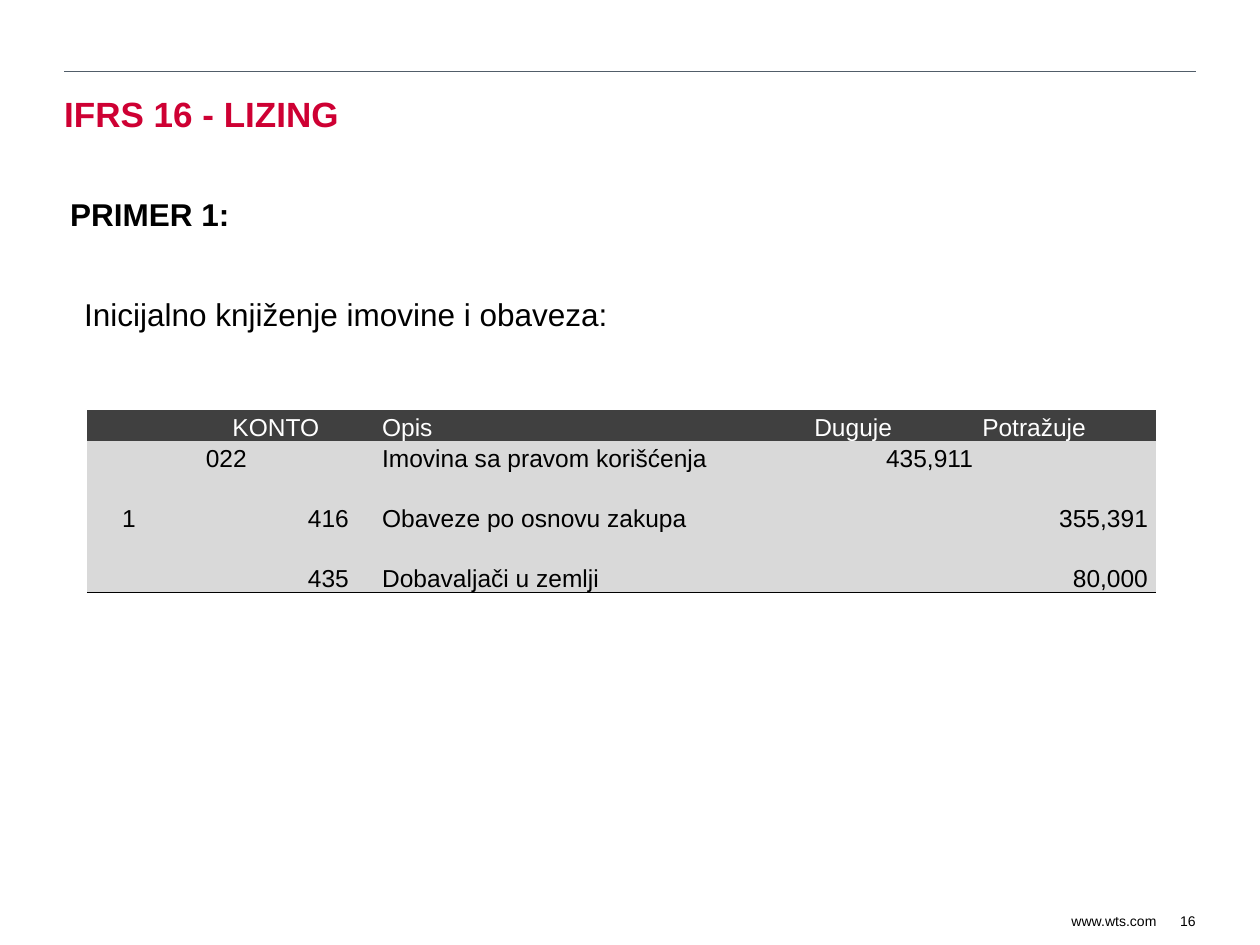
"""Build the lease accounting slide with its opening journal entry."""
from dataclasses import dataclass

from lxml import etree
from pptx import Presentation
from pptx import util as u
from pptx.dml.color import RGBColor
from pptx.enum import shapes, text
from pptx.oxml import ns

LEFT, MID, RIGHT = text.PP_ALIGN.LEFT, text.PP_ALIGN.CENTER, text.PP_ALIGN.RIGHT
PLAIN = "{2D5ABB26-0587-4C30-8999-92F81FD0307C}"


@dataclass(frozen=True)
class Theme:
    """Hold the font, colours and type sizes."""
    font: str = "Arial"
    red: str = "CE0033"
    ink: str = "000000"
    white: str = "FFFFFF"
    rule: str = "515D69"
    head: str = "404040"
    band: str = "D9D9D9"
    title: int = 20
    body: int = 18
    cell: int = 14
    foot: int = 8


THEME = Theme()
COLS = (48, 60, 60, 247, 96, 100)
ROWS = (17.7, 17.7, 34.3, 34.3)
ALIGNS = (MID, MID, MID, LEFT, RIGHT, RIGHT)
ENTRIES = (
    ("", "KONTO", "", "Opis", "Duguje", "Potražuje"),
    ("", "022", "", "Imovina sa pravom korišćenja", "435,911", ""),
    ("1", "", "416", "Obaveze po osnovu zakupa", "", "355,391"),
    ("", "", "435", "Dobavaljači u zemlji", "", "80,000"),
)


def style(frame, size, color, bold=False, align=LEFT):
    """Format every run in a text frame."""
    for par in frame.paragraphs:
        par.alignment = align
        for run in par.runs:
            font = run.font
            font.name, font.size, font.bold = THEME.font, u.Pt(size), bold
            font.color.rgb = RGBColor.from_string(color)


def place(shape, left, top, width, height):
    """Set the bounds of a shape in points."""
    shape.left, shape.top = u.Pt(left), u.Pt(top)
    shape.width, shape.height = u.Pt(width), u.Pt(height)


def inset(frame, left=0, top=0, right=0, bottom=0):
    """Set the margins of a frame or cell in points."""
    frame.margin_left, frame.margin_top = u.Pt(left), u.Pt(top)
    frame.margin_right, frame.margin_bottom = u.Pt(right), u.Pt(bottom)


def add_rule(slide):
    """Draw the thin line above the title."""
    line = slide.shapes.add_connector(
        shapes.MSO_CONNECTOR.STRAIGHT, u.Pt(36.7), u.Pt(41), u.Pt(683.3), u.Pt(41))
    line.line.color.rgb = RGBColor.from_string(THEME.rule)
    line.line.width = u.Pt(0.75)
    etree.SubElement(line._element.spPr, ns.qn("a:effectLst"))


def add_title(slide, words):
    """Fill the title placeholder."""
    title = slide.shapes.title
    place(title, 36.7, 52, 646.6, 48)
    frame = title.text_frame
    frame.text = words
    frame.vertical_anchor = text.MSO_ANCHOR.BOTTOM
    inset(frame, bottom=23)
    style(frame, THEME.title, THEME.red, True)


def add_text(slide, words, box, bold=False):
    """Add a line of body text."""
    frame = slide.shapes.add_textbox(*map(u.Pt, box)).text_frame
    frame.word_wrap = True
    frame.text = words
    style(frame, THEME.body, THEME.ink, bold)


def add_foot(slide, words, box):
    """Add a small footer item set to the right."""
    frame = slide.shapes.add_textbox(*map(u.Pt, box)).text_frame
    frame.word_wrap = False
    frame.vertical_anchor = text.MSO_ANCHOR.MIDDLE
    inset(frame)
    frame.text = words
    style(frame, THEME.foot, THEME.ink, align=RIGHT)


def underline(cell):
    """Draw a black border below a cell."""
    props = cell._tc.get_or_add_tcPr()
    edge = etree.Element(ns.qn("a:lnB"), w=str(u.Pt(1)))
    fill = etree.SubElement(edge, ns.qn("a:solidFill"))
    etree.SubElement(fill, ns.qn("a:srgbClr"), val=THEME.ink)
    props.insert(0, edge)


def fill_cell(cell, words, align, head):
    """Fill and format one table cell."""
    cell.fill.solid()
    cell.fill.fore_color.rgb = RGBColor.from_string(THEME.head if head else THEME.band)
    cell.vertical_anchor = text.MSO_ANCHOR.BOTTOM
    inset(cell, 4 if words == "022" else 0.7, 0.7, 4.6 if align == RIGHT else 0.7)
    cell.text = words
    style(cell.text_frame, THEME.cell, THEME.white if head else THEME.ink, align=align)
    if not words:
        par = cell.text_frame.paragraphs[0]._p
        etree.SubElement(par, ns.qn("a:endParaRPr"), sz=str(THEME.cell * 100))


def add_entries(slide):
    """Add the table of journal entries."""
    shape = slide.shapes.add_table(
        len(ROWS), len(COLS), u.Pt(49.7), u.Pt(234.5), u.Pt(sum(COLS)), u.Pt(sum(ROWS)))
    table = shape.table
    table.first_row = table.horz_banding = False
    table._tbl.tblPr.find(ns.qn("a:tableStyleId")).text = PLAIN
    for col, width in zip(table.columns, COLS):
        col.width = u.Pt(width)
    for i, (row, height, entry) in enumerate(zip(table.rows, ROWS, ENTRIES)):
        row.height = u.Pt(height)
        for j, (cell, words, align) in enumerate(zip(row.cells, entry, ALIGNS)):
            head = i == 0
            fill_cell(cell, words, LEFT if head and j > 2 else align, head)
            if i == len(ROWS) - 1:
                underline(cell)
    table.cell(0, 1).merge(table.cell(0, 2))


def main():
    """Build and save the slide."""
    deck = Presentation()
    deck.slide_width, deck.slide_height = u.Pt(720), u.Pt(540)
    slide = deck.slides.add_slide(deck.slide_layouts[5])
    add_rule(slide)
    add_foot(slide, "16", (667.5, 521.3, 15.8, 10))
    add_foot(slide, "www.wts.com", (611.3, 521.3, 49.7, 10))
    add_title(slide, "IFRS 16 - LIZING")
    add_text(slide, "PRIMER 1:", (33, 108, 643, 29), True)
    add_text(slide, "Inicijalno knjiženje imovine i obaveza:", (41, 165, 557, 29))
    add_entries(slide)
    deck.save("out.pptx")


if __name__ == "__main__":
    main()
